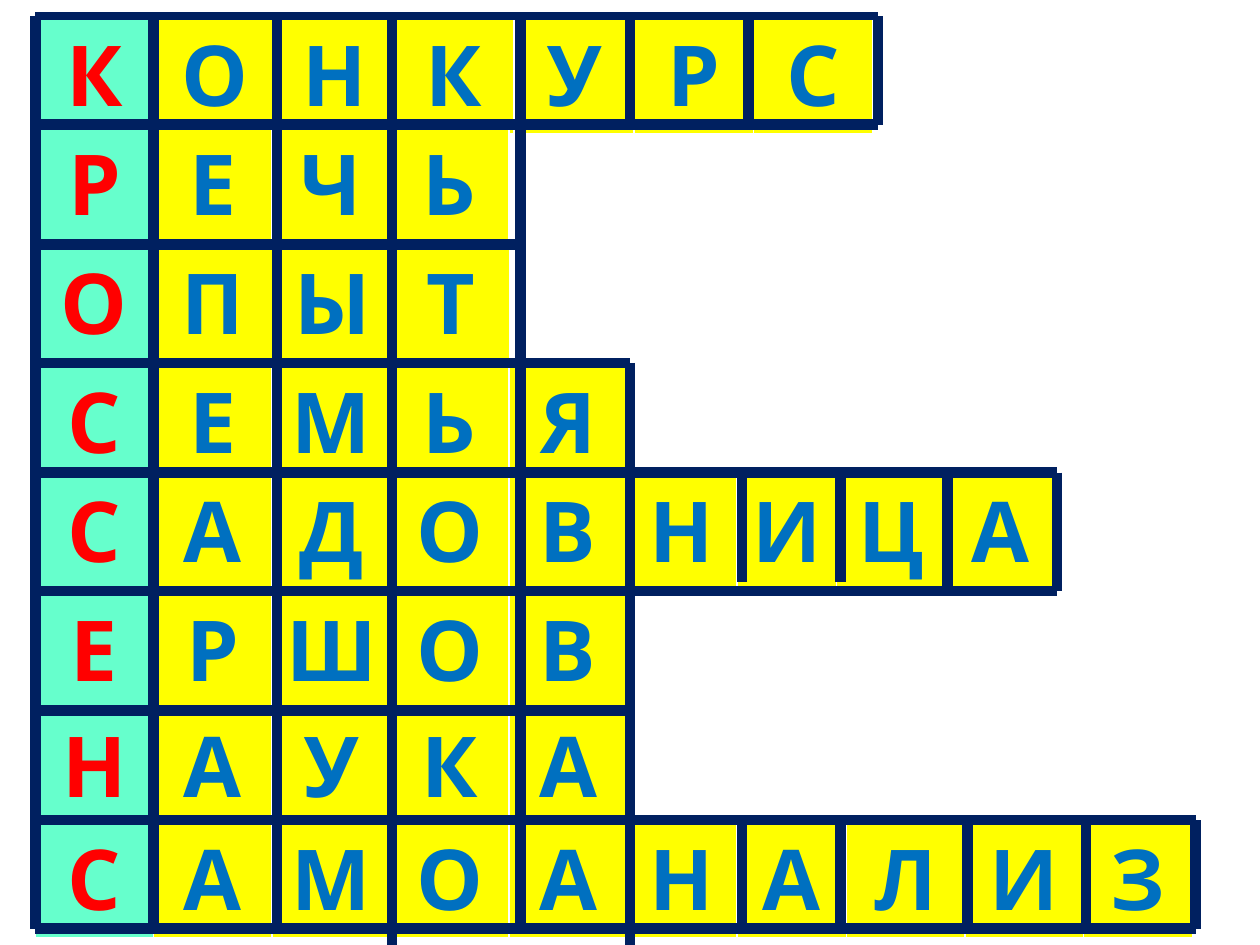
from lxml import etree
from pptx import Presentation
from pptx.dml.color import RGBColor
from pptx.enum import shapes, text
from pptx.oxml.ns import qn
from pptx.util import Inches, Pt

RED = RGBColor(0xFF, 0x00, 0x00)
BLUE = RGBColor(0x00, 0x70, 0xC0)
MINT = RGBColor(0x66, 0xFF, 0xCC)
YELLOW = RGBColor(0xFF, 0xFF, 0x00)
NAVY = RGBColor(0x00, 0x20, 0x60)
FONT = "Quicksand"

LEFT, TOP, BOTTOM = 0.28, 0.13, 7.37
CELL = 0.94

# word, top, height, column widths
WORDS = [
    ("КОНКУРС", 0.13, 0.9, [0.95] * 7),
    ("РЕЧЬ", 0.99, 0.98, [CELL] * 4),
    ("ОПЫТ", 1.94, 0.98, [0.93, 0.96, CELL, CELL]),
    ("СЕМЬЯ", 2.88, 0.9, [CELL] * 5),
    ("САДОВНИЦА", 3.75, 0.98, [CELL] * 5 + [0.87, 0.79, 0.87, 0.87]),
    ("ЕРШОВ", 4.69, 0.98, [CELL] * 5),
    ("НАУКА", 5.61, 0.9, [CELL] * 5),
    ("САМОАНАЛИЗ", 6.51, 0.9,
     [CELL] * 5 + [0.87, 0.87, CELL, CELL, 0.87]),
]

# y, left end, right end, line width
HORIZONTALS = [
    (TOP, LEFT, 6.97, 4.5),
    (0.99, LEFT, 6.97, 6),
    (1.94, LEFT, 4.13, 6),
    (2.88, LEFT, 5, 6),
    (3.75, LEFT, 8.39, 6),
    (4.69, LEFT, 8.39, 6),
    (5.64, LEFT, 5, 6),
    (6.51, LEFT, 5, 6),
    (6.51, 4.88, 9.49, 6),
    (BOTTOM, LEFT, 9.49, 6),
]

# top, bottom, x positions
VERTICALS = [
    (TOP, BOTTOM, [LEFT, 1.22, 2.2, 4.13]),
    (TOP, 7.5, [3.11]),
    (TOP, 0.99, [5, 5.94, 6.97]),
    (2.88, 3.75, [5]),
    (3.75, 4.69, [5, 7.52, 8.39]),
    (3.74, 4.62, [5.89, 6.67]),
    (4.69, 6.51, [5]),
    (6.51, 7.5, [5]),
    (6.51, BOTTOM, [5.89, 6.67, 7.68, 8.62, 9.49]),
]


def add_word(s, word, top, height, widths):
    table = s.shapes.add_table(
        1, len(word), Inches(LEFT), Inches(top),
        Inches(sum(widths)), Inches(height)).table
    for i, (letter, width) in enumerate(zip(word, widths)):
        table.columns[i].width = Inches(width)
        cell = table.cell(0, i)
        cell.fill.solid()
        cell.fill.fore_color.rgb = YELLOW if i else MINT
        p = cell.text_frame.paragraphs[0]
        p.alignment = text.PP_ALIGN.CENTER
        r = p.add_run()
        r.text = letter
        r.font.name = FONT
        r.font.size = Pt(48)
        r.font.bold = True
        r.font.color.rgb = BLUE if i else RED


def add_line(s, x1, y1, x2, y2, width=6):
    line = s.shapes.add_connector(
        shapes.MSO_CONNECTOR.STRAIGHT,
        Inches(x1), Inches(y1), Inches(x2), Inches(y2))
    line.line.color.rgb = NAVY
    line.line.width = Pt(width)
    etree.SubElement(line._element.spPr, qn("a:effectLst"))


def main():
    prs = Presentation()
    prs.slide_width, prs.slide_height = Inches(10), Inches(7.5)
    s = prs.slides.add_slide(prs.slide_layouts[6])
    for row in WORDS:
        add_word(s, *row)
    for y, x1, x2, width in HORIZONTALS:
        add_line(s, x1, y, x2, y, width)
    for y1, y2, xs in VERTICALS:
        for x in xs:
            add_line(s, x, y1, x, y2)
    prs.save("out.pptx")


if __name__ == "__main__":
    main()
